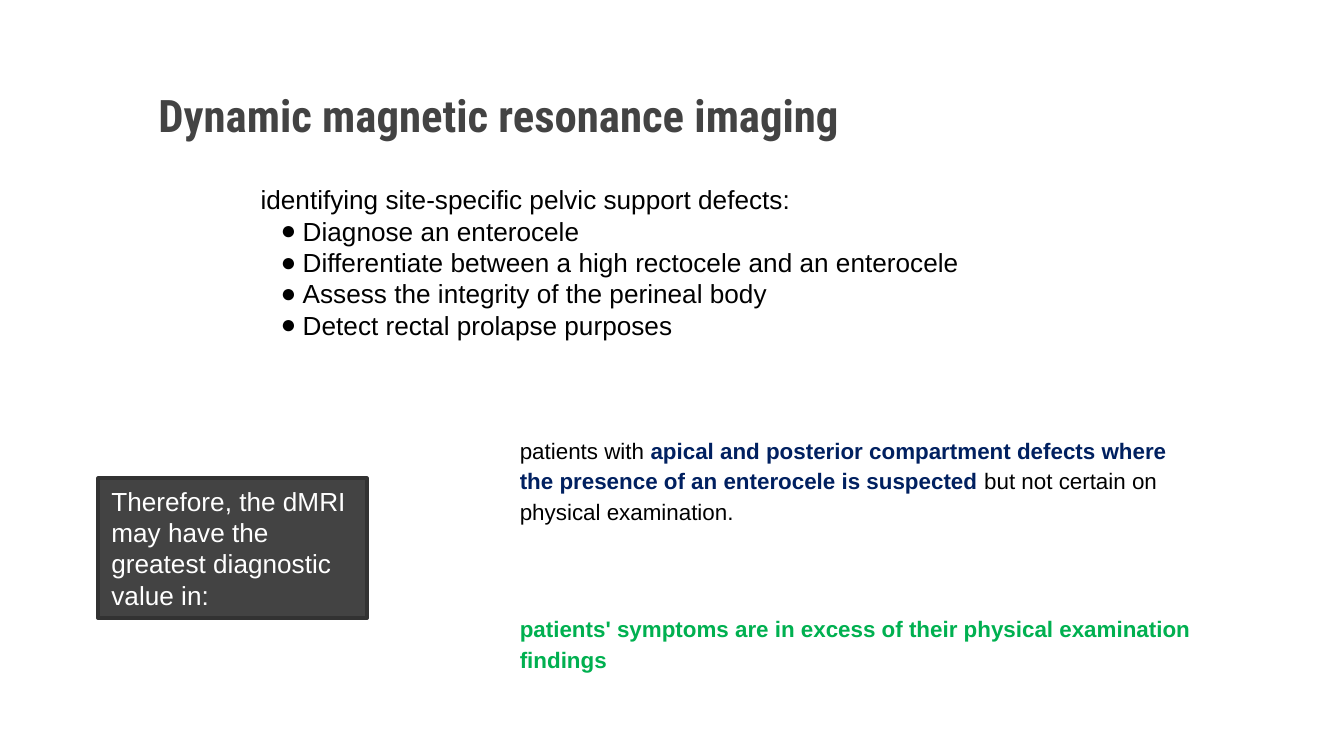
from lxml.etree import SubElement
from pptx import Presentation
from pptx.dml.color import RGBColor
from pptx.enum.shapes import MSO_SHAPE
from pptx.enum.text import MSO_ANCHOR, PP_ALIGN
from pptx.oxml.ns import qn
from pptx.util import Pt

BLACK, WHITE, CHARCOAL = "000000", "FFFFFF", "434343"
NAVY, GREEN = "002060", "00B050"
INSET = 7.2


def color(value):
    return RGBColor.from_string(value)


def set_frame(box, anchor, vertical_inset=INSET):
    frame = box.text_frame
    frame.word_wrap = True
    frame.vertical_anchor = anchor
    frame.margin_left = frame.margin_right = Pt(INSET)
    frame.margin_top = frame.margin_bottom = Pt(vertical_inset)
    return frame


def set_font(para, size, value, name="Arial", bold=False):
    para.alignment = PP_ALIGN.LEFT
    para.font.name = name
    para.font.size = Pt(size)
    para.font.bold = bold
    para.font.color.rgb = color(value)


def add_bullet(para, left, hanging):
    properties = para._p.get_or_add_pPr()
    properties.set("marL", str(Pt(left)))
    properties.set("indent", str(-Pt(hanging)))
    SubElement(properties, qn("a:buFont"), typeface="Arial")
    SubElement(properties, qn("a:buChar"), char="●")


def add_panel(page, kind, left, top, width, height, fill, line=None):
    panel = page.shapes.add_shape(kind, Pt(left), Pt(top), Pt(width), Pt(height))
    panel.shadow.inherit = False
    panel.fill.solid()
    panel.fill.fore_color.rgb = color(fill)
    if line:
        panel.line.color.rgb = color(line)
        panel.line.width = Pt(2)
    else:
        panel.line.fill.background()
    return panel


def add_text(page, left, top, width, height, anchor=MSO_ANCHOR.TOP):
    box = page.shapes.add_textbox(Pt(left), Pt(top), Pt(width), Pt(height))
    return set_frame(box, anchor).paragraphs[0]


def add_patient_group(page, panel_top, text_top, spans):
    """White panel with a text over it; spans are (text, colour, bold)."""
    add_panel(page, MSO_SHAPE.SNIP_2_DIAG_RECTANGLE, 252.7, panel_top, 417.6, 72.7, WHITE)
    para = add_text(page, 271.4, text_top, 380.9, 25.2)
    para.line_spacing = 1.15
    set_font(para, 12, BLACK)
    for text, value, bold in spans:
        span = para.add_run()
        span.text = text
        span.font.color.rgb = color(value)
        span.font.bold = bold


def add_defect_list(page, heading, items):
    panel = add_panel(page, MSO_SHAPE.SNIP_2_DIAG_RECTANGLE, 124.6, 92.9, 444.2, 95, WHITE)
    frame = set_frame(panel, MSO_ANCHOR.MIDDLE)
    frame.text = "\n".join([heading, *items])
    for para in frame.paragraphs[1:]:
        add_bullet(para, 22.6, 11.8)
    for para in frame.paragraphs:
        set_font(para, 14, BLACK)


def main():
    deck = Presentation()
    deck.slide_width, deck.slide_height = Pt(720), Pt(405)
    page = deck.slides.add_slide(deck.slide_layouts[6])

    # Title
    title = add_text(page, 77.8, 42.5, 563.8, 37.4, MSO_ANCHOR.MIDDLE)
    title.text = "Dynamic magnetic resonance imaging"
    set_font(title, 24, CHARCOAL, "Roboto Condensed", True)

    # Uses of the imaging
    add_defect_list(page, "identifying site-specific pelvic support defects:", [
        "Diagnose an enterocele",
        "Differentiate between a high rectocele and an enterocele",
        "Assess the integrity of the perineal body",
        "Detect rectal prolapse purposes",
    ])

    # Patients who benefit most
    add_patient_group(page, 217.4, 224.6, [
        ("patients with ", BLACK, False),
        ("apical and posterior compartment defects where the presence of "
         "an enterocele is suspected ", NAVY, True),
        ("but not certain on physical examination.", BLACK, False),
    ])
    add_patient_group(page, 309.6, 320.4, [
        ("patients' symptoms are in excess of their physical examination findings",
         GREEN, True),
    ])

    # Conclusion
    conclusion = add_panel(page, MSO_SHAPE.RECTANGLE, 52.6, 256.3, 144, 74.9, CHARCOAL, "323232")
    para = set_frame(conclusion, MSO_ANCHOR.TOP, 3.6).paragraphs[0]
    para.text = "Therefore, the dMRI may have the greatest diagnostic value in:"
    set_font(para, 14, WHITE)

    deck.save("out.pptx")


if __name__ == "__main__":
    main()
